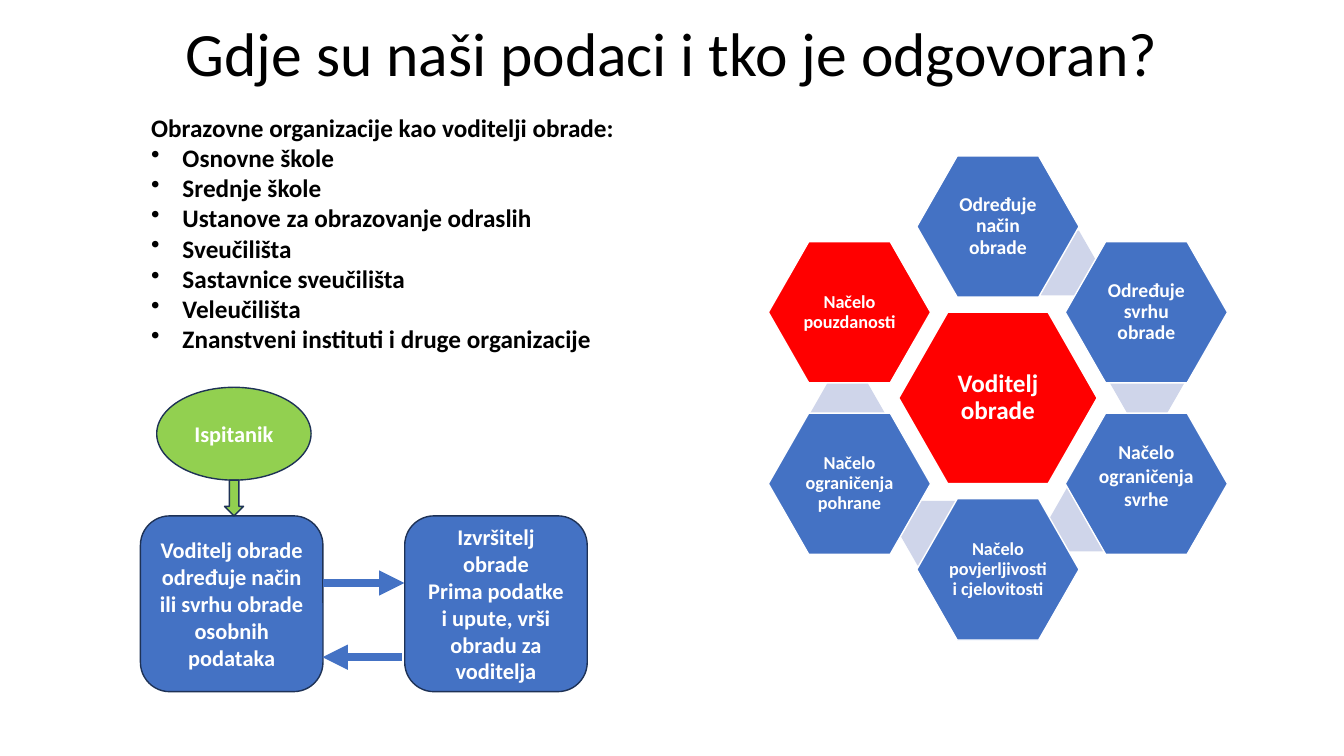
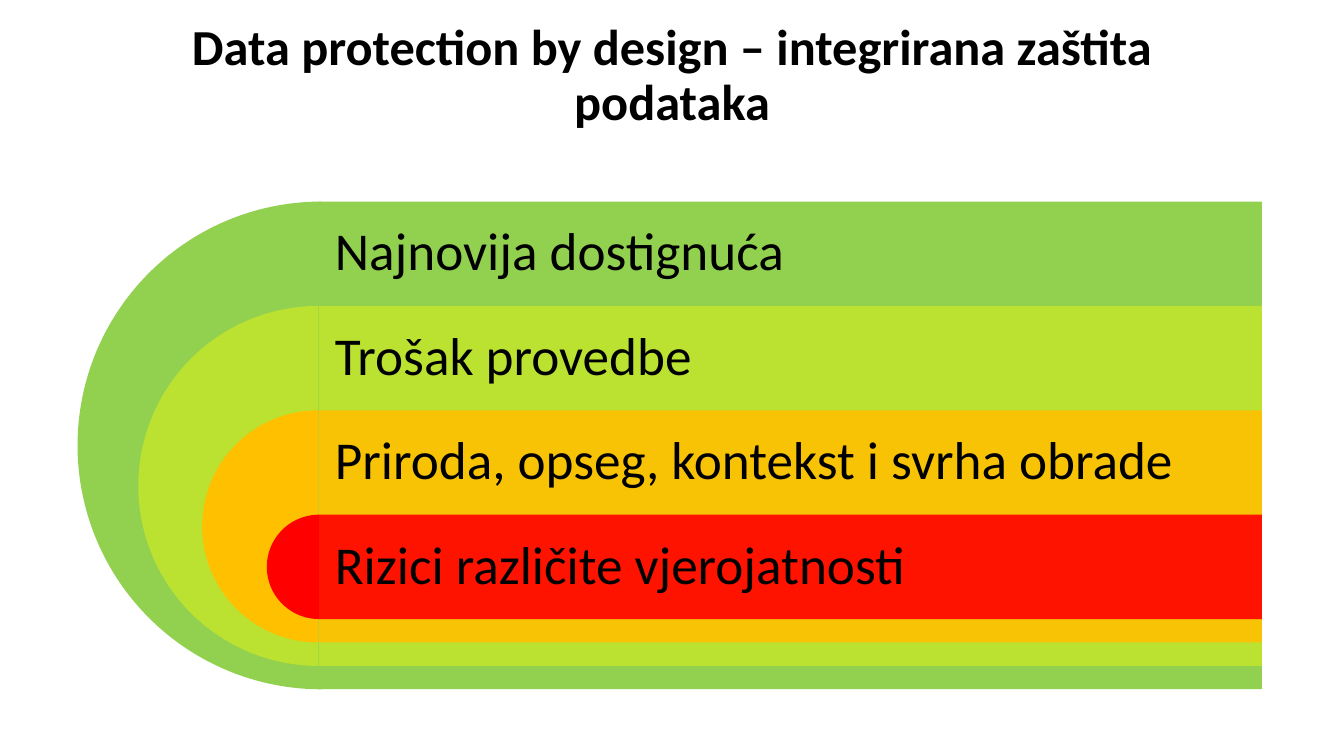
import pptx
import pptx.util
import pptx.dml.color
import pptx.enum.shapes
import pptx.enum.text
import pptx.oxml.ns
import pptx.oxml.xmlchemy
import math

Cm = pptx.util.Cm
MSO = pptx.enum.shapes.MSO_SHAPE
ALIGN = pptx.enum.text.PP_ALIGN
ANCHOR = pptx.enum.text.MSO_ANCHOR
qn = pptx.oxml.ns.qn

FONT = "Calibri"
BLUE, RED, GREEN = "4472C4", "FF0000", "92D050"
WHITE, BLACK, NAVY, PALE = "FFFFFF", "000000", "1E3256", "CFD5EA"

DATA_TITLE = "Gdje su naši podaci i tko je odgovoran?"
LIST_HEAD = "Obrazovne organizacije kao voditelji obrade:"
ORGANISATIONS = [
    "Osnovne škole",
    "Srednje škole",
    "Ustanove za obrazovanje odraslih",
    "Sveučilišta",
    "Sastavnice sveučilišta",
    "Veleučilišta",
    "Znanstveni instituti i druge organizacije",
]
FLOW = [
    (MSO.ROUNDED_RECTANGLE, 3.54, 13.0, 4.6, 4.43, BLUE,
     ["Voditelj obrade određuje način ili svrhu obrade osobnih podataka"]),
    (MSO.ROUNDED_RECTANGLE, 10.2, 13.0, 4.6, 4.43, BLUE,
     ["Izvršitelj obrade", "Prima podatke i upute, vrši obradu za voditelja"]),
    (MSO.OVAL, 3.95, 9.76, 3.89, 2.34, GREEN, ["Ispitanik"]),
    (MSO.DOWN_ARROW, 5.66, 12.1, 0.48, 0.9, GREEN, []),
]
ARROWS = [(8.13, 10.19, 14.69), (10.12, 8.13, 16.56)]

HUB_X, HUB_Y, RING = 25.15, 10.03, 4.32
HUB_TEXT = "Voditelj obrade"
DUTIES = [
    ("Određuje način obrade", 14, BLUE, {}),
    ("Određuje svrhu obrade", 14, BLUE, {}),
    ("Načelo ograničenja svrhe", 14, BLUE, {"spacing": 1.0, "bottom": 0.48}),
    ("Načelo povjerljivosti i cjelovitosti", 13, BLUE, {}),
    ("Načelo ograničenja pohrane", 13, BLUE, {}),
    ("Načelo pouzdanosti", 13, RED, {}),
]
LINKS = [(1.57, -3.4), (3.76, -0.38), (2.23, 3.05), (-1.55, 3.41), (-3.79, 0.38)]

DESIGN_TITLE = "Data protection by design – integrirana zaštita podataka"
LAYERS = [
    ("Najnovija dostignuća", GREEN, 100, 100, 8.1),
    ("Trošak provedbe", "FFFF00", 38, 38, 8.02),
    ("Priroda, opseg, kontekst i svrha obrade", "FFC000", 100, 90, 8.02),
    ("Rizici različite vjerojatnosti", RED, 100, 90, 8.04),
]
LAYER_LEFT, LAYER_TOP, LAYER_WIDTH = 8.03, 5.08, 23.77
BAND, LAYER_SHRINK = 2.63, 3.22


def rgb(color):
    return pptx.dml.color.RGBColor.from_string(color)


def add_element(parent, tag, **attributes):
    element = pptx.oxml.xmlchemy.OxmlElement(tag)
    for name, value in attributes.items():
        element.set(name, value)
    parent.append(element)


def write(sp, lines, size, color=BLACK, bold=False, align=ALIGN.LEFT,
          anchor=ANCHOR.MIDDLE, spacing=1.0, inset=(0.25, 0.13), bottom=None,
          bullets_from=None):
    tf = sp.text_frame
    tf.word_wrap = True
    tf.vertical_anchor = anchor
    tf.margin_left = tf.margin_right = Cm(inset[0])
    tf.margin_top = Cm(inset[1])
    tf.margin_bottom = Cm(inset[1] if bottom is None else bottom)
    for i, line in enumerate(lines):
        p = tf.add_paragraph() if i else tf.paragraphs[0]
        if bullets_from is not None and i >= bullets_from:
            pPr = p._p.get_or_add_pPr()
            pPr.set("marL", str(Cm(0.79)))
            pPr.set("indent", str(-Cm(0.79)))
            add_element(pPr, "a:buChar", char="•")
        p.alignment = align
        p.line_spacing = spacing
        r = p.add_run()
        r.text = line
        r.font.name = FONT
        r.font.size = pptx.util.Pt(size)
        r.font.bold = bold
        r.font.color.rgb = rgb(color)


def add_text(s, x, y, w, h, lines, size, **fmt):
    write(s.shapes.add_textbox(Cm(x), Cm(y), Cm(w), Cm(h)), lines, size, **fmt)


def add_title(s, text, y, h, size, bold=False):
    add_text(s, 1.98, y, 29.92, h, [text], size, bold=bold,
             align=ALIGN.CENTER, spacing=0.9)


def add_shape(s, kind, x, y, w, h, fill, line=None, opacity=100):
    sp = s.shapes.add_shape(kind, Cm(x), Cm(y), Cm(w), Cm(h))
    sp.shadow.inherit = False
    sp.fill.solid()
    sp.fill.fore_color.rgb = rgb(fill)
    if opacity < 100:
        color = sp._element.spPr.find(qn("a:solidFill"))[0]
        add_element(color, "a:alpha", val=str(opacity * 1000))
    if line:
        sp.line.color.rgb = rgb(line)
        sp.line.width = pptx.util.Pt(1)
    else:
        sp.line.fill.background()
    return sp


def add_hexagon(s, dx, dy, w, h, fill, line=None):
    sp = add_shape(s, MSO.HEXAGON, HUB_X + dx - w / 2, HUB_Y + dy - h / 2,
                   w, h, fill, line)
    sp.adjustments[0] = 0.286
    return sp


def add_arrow(s, x1, x2, y):
    c = s.shapes.add_connector(pptx.enum.shapes.MSO_CONNECTOR.STRAIGHT,
                               Cm(x1), Cm(y), Cm(x2), Cm(y))
    c.line.color.rgb = rgb(BLUE)
    c.line.width = pptx.util.Pt(6)
    spPr = c._element.spPr
    add_element(spPr.find(qn("a:ln")), "a:tailEnd", type="triangle")
    add_element(spPr, "a:effectLst")


def build_data_slide(s):
    add_title(s, DATA_TITLE, 0.3, 2.24, 44)

    label = {"color": WHITE, "bold": True, "align": ALIGN.CENTER}
    hex_label = {**label, "spacing": 0.9, "inset": (0.05, 0.05)}
    hub = add_hexagon(s, 0, 0, 5.0, 4.32, RED, WHITE)
    write(hub, [HUB_TEXT], 18, **hex_label)
    for i, (text, size, fill, extra) in enumerate(DUTIES):
        if i < len(LINKS):
            add_hexagon(s, *LINKS[i], 1.88, 1.63, PALE)
        angle = math.radians(60 * i)
        duty = add_hexagon(s, RING * math.sin(angle), -RING * math.cos(angle),
                           4.09, 3.56, fill, WHITE)
        write(duty, [text], size, **{**hex_label, **extra})

    add_text(s, 3.56, 2.69, 14.83, 6.4, [LIST_HEAD] + ORGANISATIONS, 18,
             bold=True, anchor=ANCHOR.TOP, bullets_from=1)
    for kind, x, y, w, h, fill, lines in FLOW:
        write(add_shape(s, kind, x, y, w, h, fill, NAVY), lines, 16, **label)
    for arrow in ARROWS:
        add_arrow(s, *arrow)


def build_design_slide(s):
    add_title(s, DESIGN_TITLE, 0.76, 2.34, 36, bold=True)
    for i, (text, fill, pie_opacity, bar_opacity, pie_x) in enumerate(LAYERS):
        y = LAYER_TOP + i * BAND
        h = 12.29 - i * LAYER_SHRINK
        pie = add_shape(s, MSO.PIE, pie_x - h / 2, y, h, h, fill,
                        opacity=pie_opacity)
        pie.adjustments[0] = 54
        pie.adjustments[1] = 162
        bar = add_shape(s, MSO.RECTANGLE, LAYER_LEFT, y, LAYER_WIDTH, h, fill,
                        opacity=bar_opacity)
        write(bar, [text], 38, spacing=0.9, inset=(0.41, 0.41),
              bottom=h - BAND + 0.41)


def main():
    prs = pptx.Presentation()
    prs.slide_width, prs.slide_height = Cm(33.87), Cm(19.05)
    for build in (build_data_slide, build_design_slide):
        build(prs.slides.add_slide(prs.slide_layouts[6]))
    prs.save("out.pptx")


if __name__ == "__main__":
    main()
